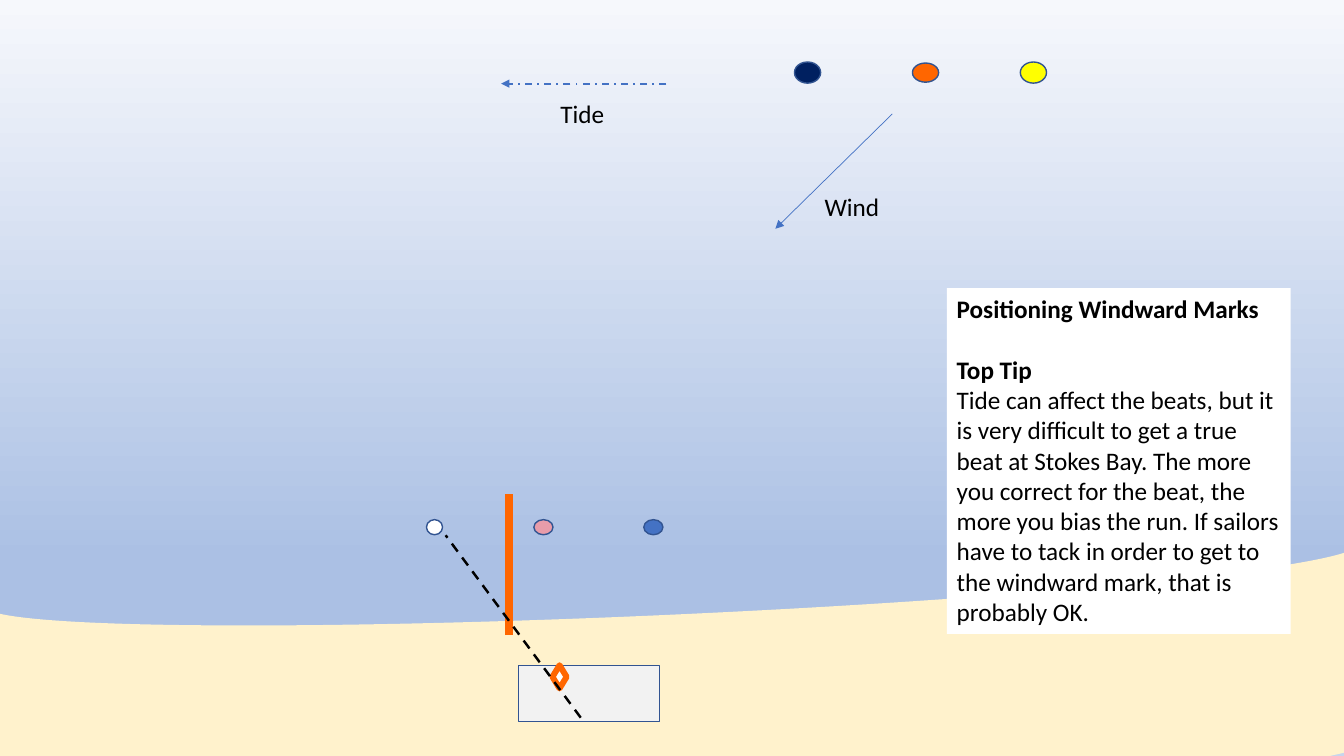
from pptx import Presentation
from pptx.dml.color import RGBColor
from pptx.enum.dml import MSO_LINE
from pptx.enum.shapes import MSO_CONNECTOR, MSO_SHAPE
from pptx.enum.text import MSO_ANCHOR, PP_ALIGN
from pptx.oxml.ns import qn
from pptx.util import Inches, Pt
from lxml import etree
from copy import deepcopy

OVAL, RECT, GEM = MSO_SHAPE.OVAL, MSO_SHAPE.RECTANGLE, MSO_SHAPE.DIAMOND
BEACH = MSO_SHAPE.FLOWCHART_STORED_DATA
DASH, DASHDOT = MSO_LINE.DASH, MSO_LINE.DASH_DOT
FONT, SIZE = "Calibri", 18
WIDE, HIGH = 13.33, 7.5

# Content
INK = {
    "sand": "FFF2CC", "hut": "F2F2F2", "edge": "325491", "orange": "FF6600",
    "blue": "4472C4", "pink": "E89CAA", "white": "FFFFFF", "black": "000000",
    "navy": "002060", "yellow": "FFFF00",
}
SKY = [(0, "F6F8FC"), (0.74, "ABC0E4"), (0.83, "ABC0E4"), (1, "C7D5ED")]

# Marks: centre x, width, colour; each row has its centre y
START_Y, TOP_Y = 5.23, 0.72
START = [(6.48, 0.19, "blue"), (5.39, 0.19, "pink"), (4.31, 0.16, "white")]
TOP = [(9.18, 0.19, "orange"), (8.01, 0.21, "navy"), (10.25, 0.21, "yellow")]

# Lines: from, to, colour, points, dash, arrow
POST = ((5.05, 6.3), (5.05, 4.9), "orange", 5.25, None, False)
FLOWS = [
    ((5.76, 7.12), (4.42, 5.31), "black", 1.75, DASH, False),
    ((8.85, 1.13), (7.69, 2.27), "blue", 0.5, None, True),
    ((6.61, 0.83), (4.97, 0.83), "blue", 1.25, DASHDOT, True),
]
LABELS = [("Wind", (8.08, 1.85, 0.97, 0.4)), ("Tide", (5.46, 0.93, 1.05, 0.4))]

# Tip: text, bold, points after
TIP = [
    ("Positioning Windward Marks", True, 22),
    ("Top Tip", True, 0),
    ("Tide can affect the beats, but it is very difficult to get a true beat "
     "at Stokes Bay. The more you correct for the beat, the more you bias the "
     "run. If sailors have to tack in order to get to the windward mark, that "
     "is probably OK.", False, 0),
]
TIP_AT = (9.39, 2.86, 3.41, 3.43)

deck = Presentation()
deck.slide_width, deck.slide_height = Inches(WIDE), Inches(HIGH)
slide = deck.slides.add_slide(deck.slide_layouts[6])
shapes = slide.shapes


def rgb(name):
    return RGBColor.from_string(INK[name])


def add_form(kind, at, fill, edge=None, points=1):
    form = shapes.add_shape(kind, *map(Inches, at))
    form.shadow.inherit = False
    form.fill.solid()
    form.fill.fore_color.rgb = rgb(fill)
    if edge:
        form.line.color.rgb = rgb(edge)
        form.line.width = Pt(points)
    else:
        form.line.fill.background()
    return form


def add_line(start, end, ink, points, dash, arrow):
    ends = map(Inches, start + end)
    line = shapes.add_connector(MSO_CONNECTOR.STRAIGHT, *ends)
    line.line.color.rgb = rgb(ink)
    line.line.width = Pt(points)
    if dash:
        line.line.dash_style = dash
    if arrow:
        pen = line.line._get_or_add_ln()
        etree.SubElement(pen, qn("a:tailEnd"), type="triangle")
    etree.SubElement(line._element.spPr, qn("a:effectLst"))


def add_marks(row, mid, tall=None):
    for x, size, ink in row:
        wide, high = (size, tall) if tall else (0.26, size)
        at = (x - wide / 2, mid - high / 2, wide, high)
        add_form(OVAL, at, ink, "edge")


def write(form, lines):
    frame = form.text_frame
    frame.word_wrap = True
    frame.vertical_anchor = MSO_ANCHOR.TOP
    for i, (text, bold, after) in enumerate(lines):
        para = frame.add_paragraph() if i else frame.paragraphs[0]
        para.alignment = PP_ALIGN.LEFT
        para.space_after = Pt(after)
        run = para.add_run()
        run.text = text
        run.font.name, run.font.size = FONT, Pt(SIZE)
        run.font.bold = bold
        run.font.color.rgb = rgb("black")


# Sky
sky = slide.background.fill
sky.gradient()
sky.gradient_angle = 270
stops = slide._element.find(".//" + qn("a:gsLst"))
while len(stops) < len(SKY):
    stops.append(deepcopy(stops[0]))
for stop, (place, ink) in zip(sky.gradient_stops, SKY):
    stop.position = place
    stop.color.rgb = RGBColor.from_string(ink)

# Shore
beach = add_form(BEACH, (5.54, 0.06, 2.35, 13.64), "sand")
beach.rotation = 267.4
add_form(RECT, (5.14, 6.6, 1.4, 0.56), "hut", "edge")
add_form(GEM, (5.48, 6.6, 0.14, 0.23), "white", "orange", 4.25)
add_line(*POST)

# Marks, wind and tide
add_marks(START, START_Y, 0.15)
for flow in FLOWS:
    add_line(*flow)
add_marks(TOP, TOP_Y)
for text, at in LABELS:
    write(shapes.add_textbox(*map(Inches, at)), [(text, False, 0)])

# Tip
write(add_form(RECT, TIP_AT, "white"), TIP)

deck.save("out.pptx")
